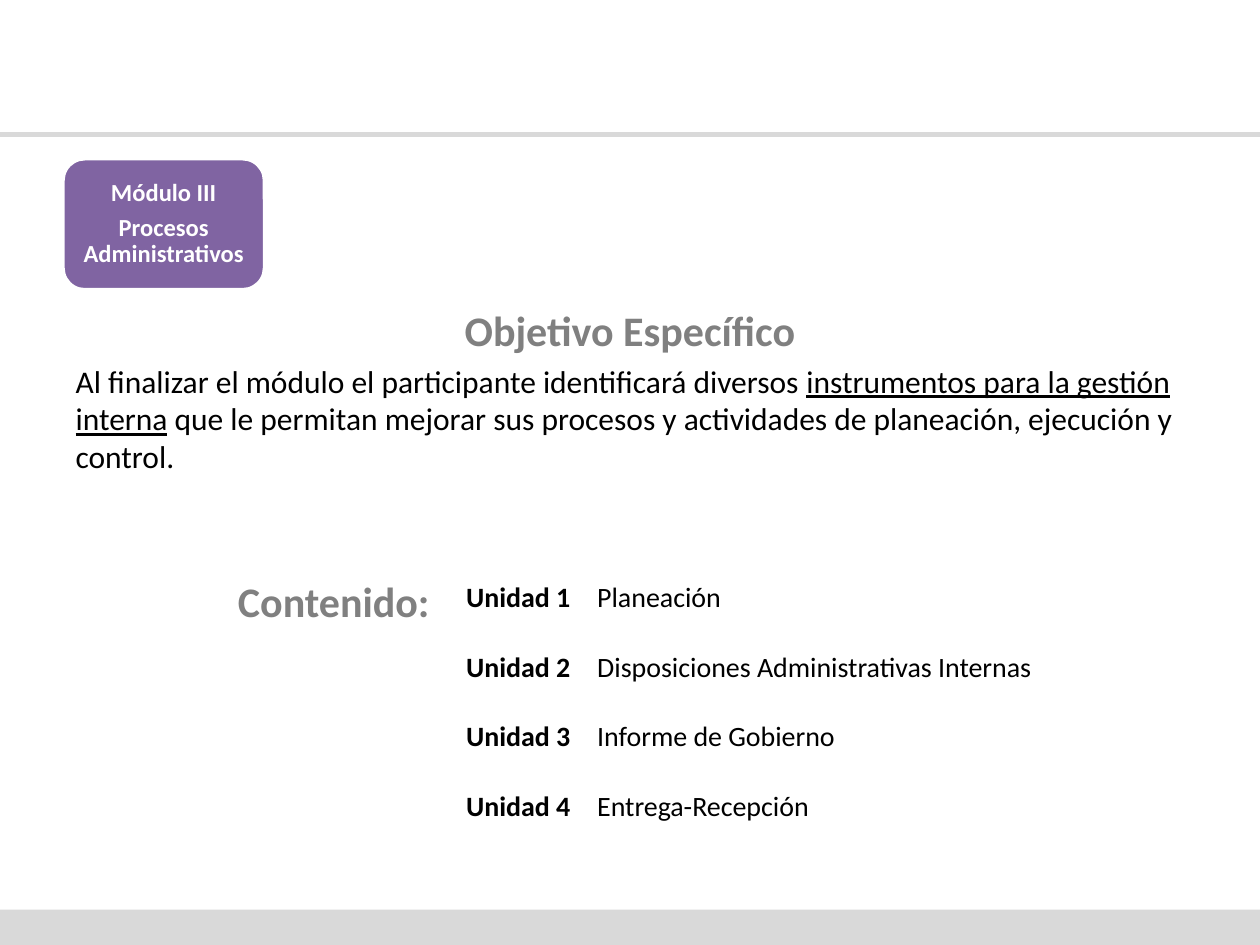
from pptx import Presentation
from pptx.dml.color import RGBColor
from pptx.enum.shapes import MSO_CONNECTOR, MSO_SHAPE
from pptx.enum.text import MSO_ANCHOR, MSO_AUTO_SIZE, PP_ALIGN
from pptx.oxml.ns import qn
from pptx.util import Inches, Pt
from lxml import etree

CENTER, LEFT = PP_ALIGN.CENTER, PP_ALIGN.LEFT
MIDDLE, BOTTOM = MSO_ANCHOR.MIDDLE, MSO_ANCHOR.BOTTOM
GRAY, BAND, PURPLE, WHITE, BLACK = "808080", "D9D9D9", "8064A2", "FFFFFF", "000000"

MODULE = ["Módulo III", "Procesos Administrativos"]
HEADING = "Objetivo Específico"
OBJECTIVE = [
    ("Al finalizar el módulo el participante identificará diversos ", False),
    ("instrumentos para la gestión interna", True),
    (" que le permitan mejorar sus procesos y actividades de planeación, "
     "ejecución y control.", False),
]
CONTENTS = "Contenido:"
UNITS = ["Planeación", "Disposiciones Administrativas Internas",
         "Informe de Gobierno", "Entrega-Recepción"]
COLUMNS = [1.04, 4.09]
UNIT_HEIGHT, GAP_HEIGHT = 0.27, 0.28


def rgb(value):
    return RGBColor.from_string(value)


def box(*lengths):
    return [Inches(n) for n in lengths]


def style(p, size, color, bold=False):
    for r in p.runs:
        r.font.name = "Calibri"
        r.font.size = Pt(size)
        r.font.bold = bold
        r.font.color.rgb = rgb(color)


def add_frame(s):
    band = s.shapes.add_shape(MSO_SHAPE.RECTANGLE, *box(0, 7.22, 10, 0.28))
    band.shadow.inherit = False
    band.fill.solid()
    band.fill.fore_color.rgb = rgb(BAND)
    band.line.fill.background()
    rule = s.shapes.add_connector(MSO_CONNECTOR.STRAIGHT, *box(0, 1.07, 10, 1.07))
    rule.line.color.rgb = rgb(BAND)
    rule.line.width = Pt(3)
    etree.SubElement(rule._element.spPr, qn("a:effectLst"))


def add_objective(s):
    body = s.placeholders[1]
    body.left, body.top, body.width, body.height = box(0.5, 2.17, 9, 2.15)
    tf = body.text_frame
    tf.auto_size = MSO_AUTO_SIZE.NONE
    tf.text = HEADING
    heading, objective = tf.paragraphs[0], tf.add_paragraph()
    for text, underline in OBJECTIVE:
        r = objective.add_run()
        r.text = text
        r.font.underline = underline
    for p in tf.paragraphs:
        pPr = p._p.get_or_add_pPr()
        pPr.set("marL", "0")
        pPr.set("indent", "0")
        etree.SubElement(pPr, qn("a:buNone"))
    heading.alignment, objective.alignment = CENTER, LEFT
    heading.line_spacing = 1.5
    heading.space_before, objective.space_before = Pt(0), Pt(3.6)
    style(heading, 24, GRAY, True)
    style(objective, 18, BLACK)


def add_module(s):
    card = s.shapes.add_shape(MSO_SHAPE.ROUNDED_RECTANGLE, *box(0.5, 1.26, 1.6, 1.04))
    card.shadow.inherit = False
    card.fill.solid()
    card.fill.fore_color.rgb = rgb(PURPLE)
    card.line.color.rgb = rgb(WHITE)
    card.line.width = Pt(2)
    tf = card.text_frame
    tf.word_wrap = True
    tf.vertical_anchor = MIDDLE
    tf.margin_left = tf.margin_right = tf.margin_top = tf.margin_bottom = Inches(0.06)
    tf.text = "\n".join(MODULE)
    for p in tf.paragraphs:
        p.alignment = CENTER
        p.line_spacing = 0.9
        p.space_after = Pt(4.9)
        style(p, 14, WHITE, True)


def add_units(s):
    rows = 2 * len(UNITS) - 1
    table = s.shapes.add_table(rows, 2, *box(3.7, 4.61, sum(COLUMNS), 1.88)).table
    table.first_row = table.horz_banding = False
    for column, width in zip(table.columns, COLUMNS):
        column.width = Inches(width)
    for i, row in enumerate(table.rows):
        row.height = Inches(GAP_HEIGHT if i % 2 else UNIT_HEIGHT)
        texts = ["", ""] if i % 2 else [f"Unidad {i // 2 + 1}", UNITS[i // 2]]
        for j, (cell, text) in enumerate(zip(row.cells, texts)):
            cell.fill.background()
            cell.vertical_anchor = BOTTOM
            cell.margin_left = cell.margin_right = 0
            cell.margin_top = cell.margin_bottom = 0
            p = cell.text_frame.paragraphs[0]
            if text:
                p.text = text
                style(p, 16, BLACK, j == 0)
            else:
                etree.SubElement(p._p, qn("a:endParaRPr"), sz="1200")


def add_contents_label(s):
    tf = s.shapes.add_textbox(*box(1.79, 4.32, 1.82, 0.71)).text_frame
    tf.word_wrap = True
    tf.text = CONTENTS
    p = tf.paragraphs[0]
    p.line_spacing = 1.5
    style(p, 24, GRAY, True)


def main():
    prs = Presentation()
    prs.slide_width, prs.slide_height = box(10, 7.5)
    s = prs.slides.add_slide(prs.slide_layouts[1])
    title = s.shapes.title._element
    title.getparent().remove(title)
    add_frame(s)
    add_objective(s)
    add_module(s)
    add_units(s)
    add_contents_label(s)
    prs.save("out.pptx")


if __name__ == "__main__":
    main()
